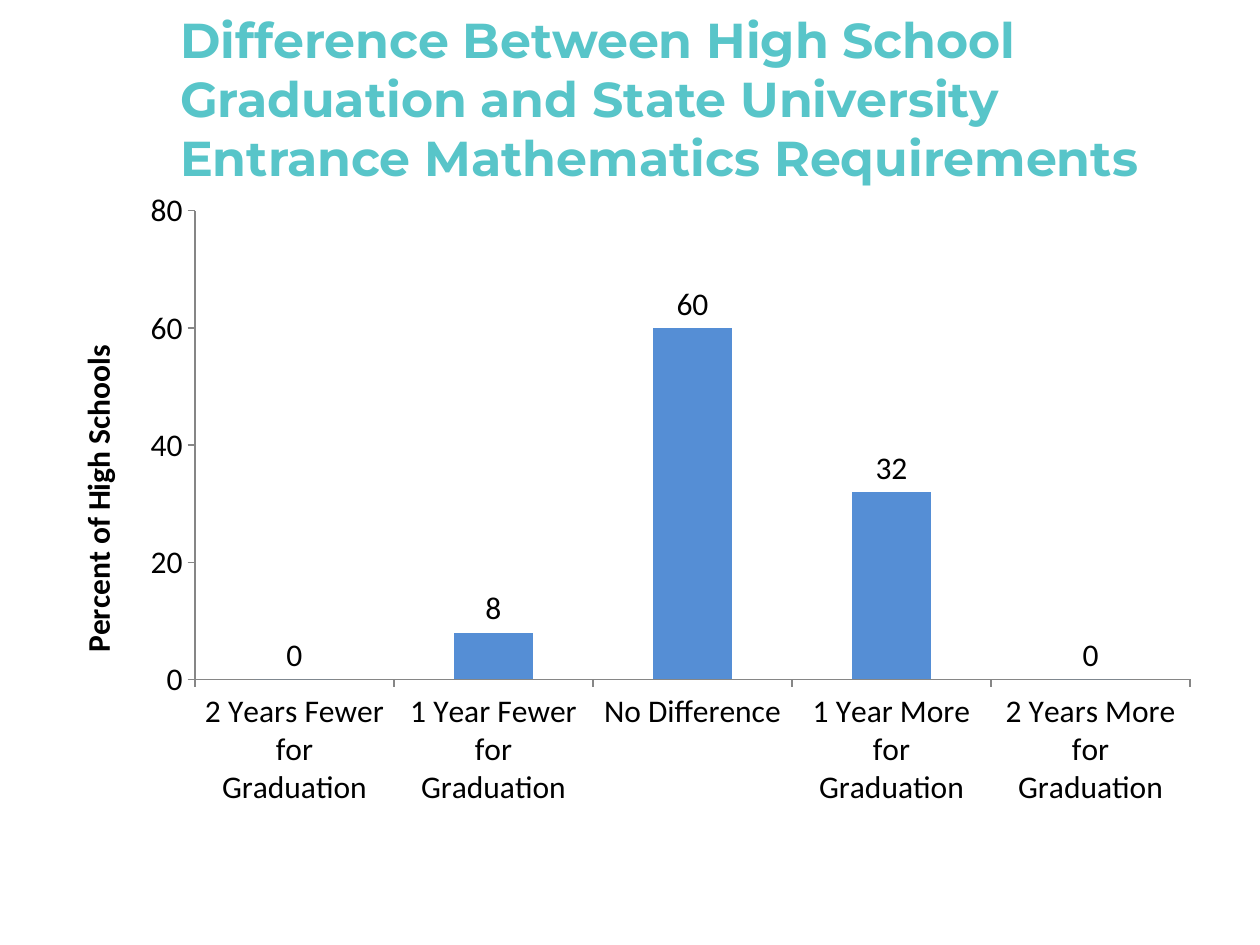
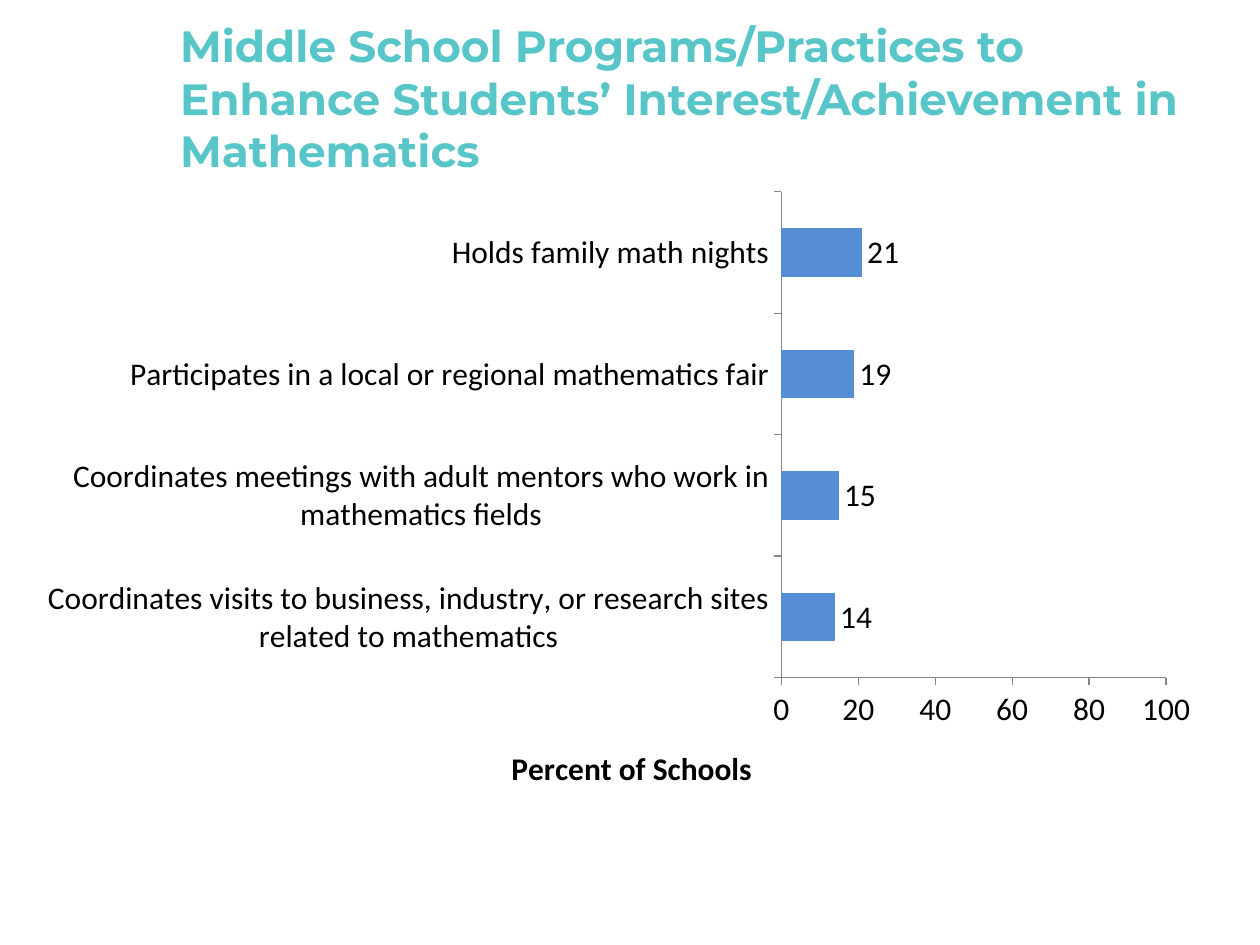
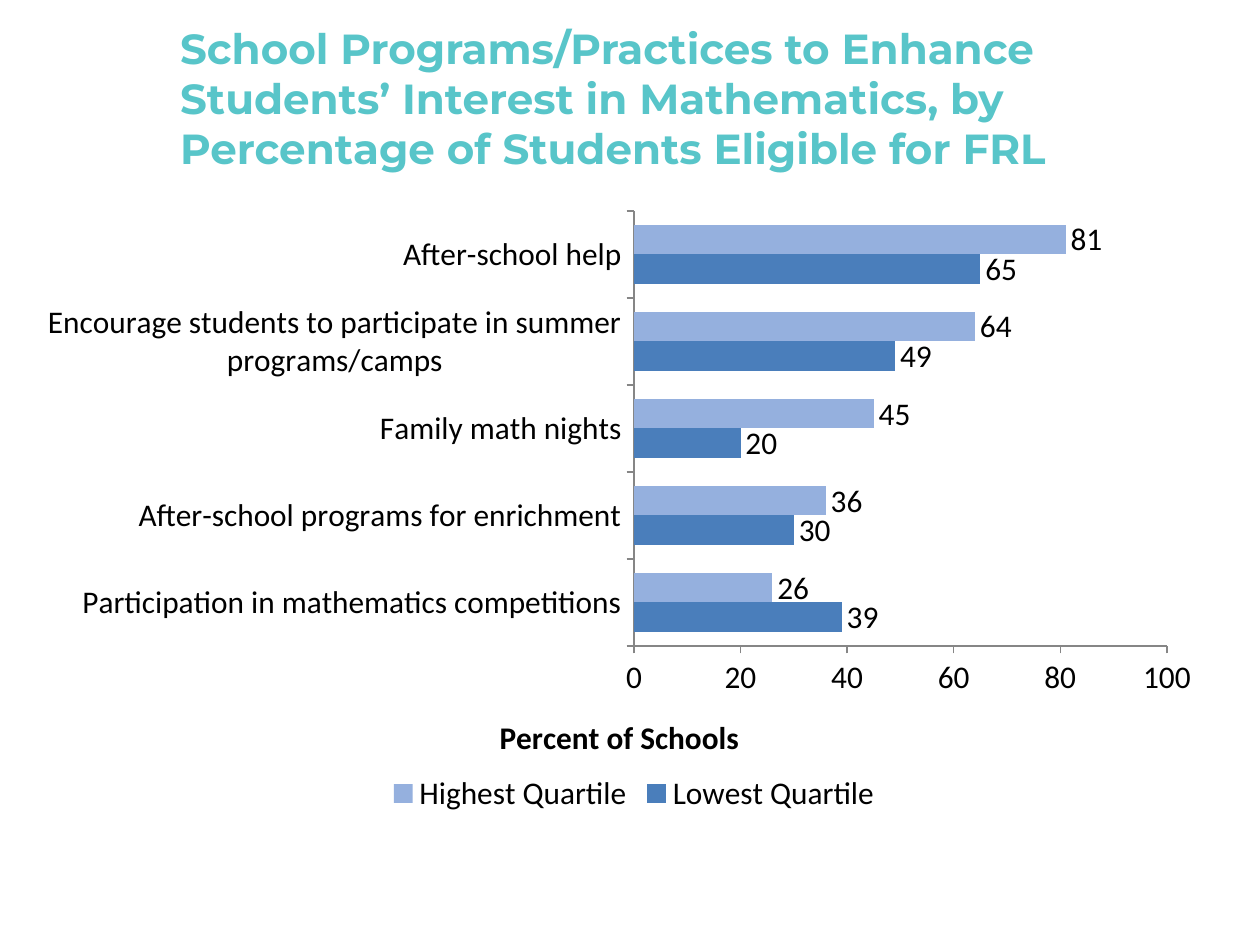
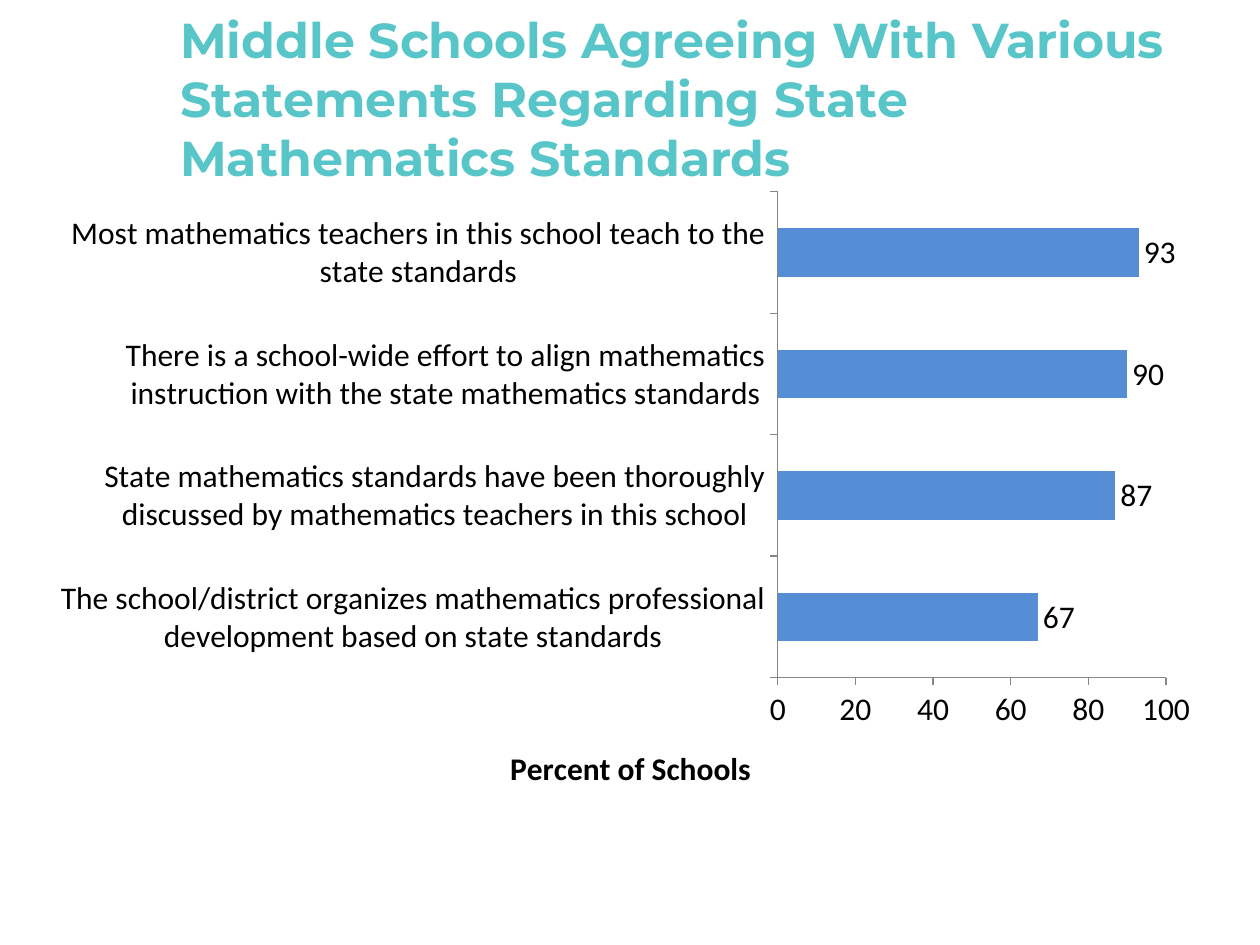
"""Build four slides of charts on mathematics programs, requirements and standards."""
from lxml import etree
from pptx import Presentation
from pptx.chart.data import CategoryChartData
from pptx.dml.color import RGBColor
from pptx.enum.chart import XL_CHART_TYPE as ChartType
from pptx.enum.chart import XL_LABEL_POSITION as LabelPosition
from pptx.enum.chart import XL_LEGEND_POSITION as LegendPosition
from pptx.enum.chart import XL_TICK_MARK as TickMark
from pptx.enum.text import MSO_ANCHOR, MSO_AUTO_SIZE, PP_ALIGN
from pptx.oxml import parse_xml
from pptx.oxml.ns import nsdecls
from pptx.util import Inches, Pt

TEAL, BLUE, DARK_BLUE, LIGHT_BLUE = "58C5C9", "558ED5", "4A7EBB", "95B0DE"
BLACK, GRAY = "000000", "868686"
TITLE_FONT, CHART_FONT = "Montserrat", "Calibri"
TITLE_BOX = (1.33, 0.3, 8.17, 0.95)
CHART_BOX = (0.38, 1.42, 9.25, 5.08)

SLIDES = [
    {
        "title": "Difference Between High School Graduation and State University "
                 "Entrance Mathematics Requirements",
        "size": 28,
        "type": ChartType.COLUMN_CLUSTERED,
        "axis": "Percent of High Schools",
        "maximum": 80,
        "categories": ["2 Years Fewer for Graduation", "1 Year Fewer for Graduation",
                       "No Difference", "1 Year More for Graduation",
                       "2 Years More for Graduation"],
        "series": [("Series 1", [0, 8, 60, 32, 0], BLUE)],
    },
    {
        "title": "Middle School Programs/Practices to Enhance Students’ "
                 "Interest/Achievement in Mathematics",
        "size": 25,
        "categories": [
            "Coordinates visits to business, industry, or research sites related to mathematics",
            "Coordinates meetings with adult mentors who work in mathematics fields",
            "Participates in a local or regional mathematics fair",
            "Holds family math nights",
        ],
        "series": [("Series 1", [14, 15, 19, 21], BLUE)],
    },
    {
        "title": "School Programs/Practices to Enhance Students’ Interest in "
                 "Mathematics, by Percentage of Students Eligible for FRL",
        "size": 24,
        "gap": 98,
        "plot": {"x": 0.5, "y": 0.05, "w": 0.46, "h": 0.68},
        "categories": [
            "Participation in mathematics competitions",
            "After-school programs for enrichment",
            "Family math nights",
            "Encourage students to participate in summer programs/camps",
            "After-school help",
        ],
        "series": [("Lowest Quartile", [39, 30, 20, 49, 65], DARK_BLUE),
                   ("Highest Quartile", [26, 36, 45, 64, 81], LIGHT_BLUE)],
    },
    {
        "title": "Middle Schools Agreeing With Various Statements Regarding "
                 "State Mathematics Standards",
        "size": 28,
        "categories": [
            "The school/district organizes mathematics professional development "
            "based on state standards",
            "State mathematics standards have been thoroughly discussed by "
            "mathematics teachers in this school",
            "There is a school-wide effort to align mathematics instruction "
            "with the state mathematics standards",
            "Most mathematics teachers in this school teach to the state standards",
        ],
        "series": [("Series 1", [67, 87, 90, 93], BLUE)],
    },
]


def color(value):
    """Turn a hex string into a colour."""
    return RGBColor.from_string(value)


def set_font(font, name, size, value, bold=False):
    """Format a font in one go."""
    font.name, font.size, font.bold = name, Pt(size), bold
    font.color.rgb = color(value)


def add_title(slide, text, size):
    """Fill and place the title placeholder."""
    title = slide.shapes.title
    title.left, title.top, title.width, title.height = map(Inches, TITLE_BOX)
    frame = title.text_frame
    frame.text = text
    frame.word_wrap = True
    frame.auto_size = MSO_AUTO_SIZE.NONE
    frame.vertical_anchor = MSO_ANCHOR.MIDDLE
    paragraph = frame.paragraphs[0]
    paragraph.alignment = PP_ALIGN.LEFT
    set_font(paragraph.runs[0].font, TITLE_FONT, size, TEAL, True)


def place_plot(chart, plot):
    """Fix the inner plot area as fractions of the chart."""
    area = chart.plots[0]._element.getparent()
    for layout in area.findall("{*}layout"):
        area.remove(layout)
    layout = parse_xml(f"<c:layout {nsdecls('c')}><c:manualLayout/></c:layout>")
    settings = {"layoutTarget": "inner", "xMode": "edge", "yMode": "edge", **plot}
    namespace = etree.QName(layout).namespace
    for tag, value in settings.items():
        etree.SubElement(layout[0], f"{{{namespace}}}{tag}").set("val", str(value))
    area.insert(0, layout)


def style_axes(chart, title, maximum):
    """Format both axes and title the value axis."""
    for axis in (chart.category_axis, chart.value_axis):
        axis.has_major_gridlines = False
        axis.major_tick_mark, axis.minor_tick_mark = TickMark.OUTSIDE, TickMark.NONE
        axis.format.line.color.rgb = color(GRAY)
        axis.format.line.width = Pt(0.75)
        set_font(axis.tick_labels.font, CHART_FONT, 18, BLACK)
    value_axis = chart.value_axis
    value_axis.minimum_scale, value_axis.maximum_scale = 0, maximum
    value_axis.major_unit = 20
    frame = value_axis.axis_title.text_frame
    frame.text = title
    set_font(frame.paragraphs[0].runs[0].font, CHART_FONT, 18, BLACK, True)


def add_bars(slide, content):
    """Add the bar or column chart of a slide."""
    data = CategoryChartData()
    data.categories = content["categories"]
    for name, values, _ in content["series"]:
        data.add_series(name, values)
    chart_type = content.get("type", ChartType.BAR_CLUSTERED)
    chart = slide.shapes.add_chart(chart_type, *map(Inches, CHART_BOX), data).chart
    set_font(chart.font, CHART_FONT, 18, BLACK)
    chart.has_title = False
    chart.has_legend = len(content["series"]) > 1
    if chart.has_legend:
        chart.legend.position = LegendPosition.BOTTOM
        chart.legend.include_in_layout = False
    style_axes(chart, content.get("axis", "Percent of Schools"), content.get("maximum", 100))
    plot = chart.plots[0]
    plot.vary_by_categories = False
    plot.gap_width = content.get("gap", 150)
    plot.overlap = 0
    for series, (_, _, fill) in zip(plot.series, content["series"]):
        series.invert_if_negative = False
        series.format.fill.solid()
        series.format.fill.fore_color.rgb = color(fill)
        labels = series.data_labels
        labels.show_value = True
        labels.position = LabelPosition.OUTSIDE_END
        set_font(labels.font, CHART_FONT, 18, BLACK)
    if "plot" in content:
        place_plot(chart, content["plot"])


def main():
    """Build and save the presentation."""
    presentation = Presentation()
    presentation.slide_width, presentation.slide_height = Inches(10), Inches(7.5)
    title_only = presentation.slide_layouts[5]
    for content in SLIDES:
        slide = presentation.slides.add_slide(title_only)
        add_bars(slide, content)
        add_title(slide, content["title"], content["size"])
    presentation.save("out.pptx")


if __name__ == "__main__":
    main()
